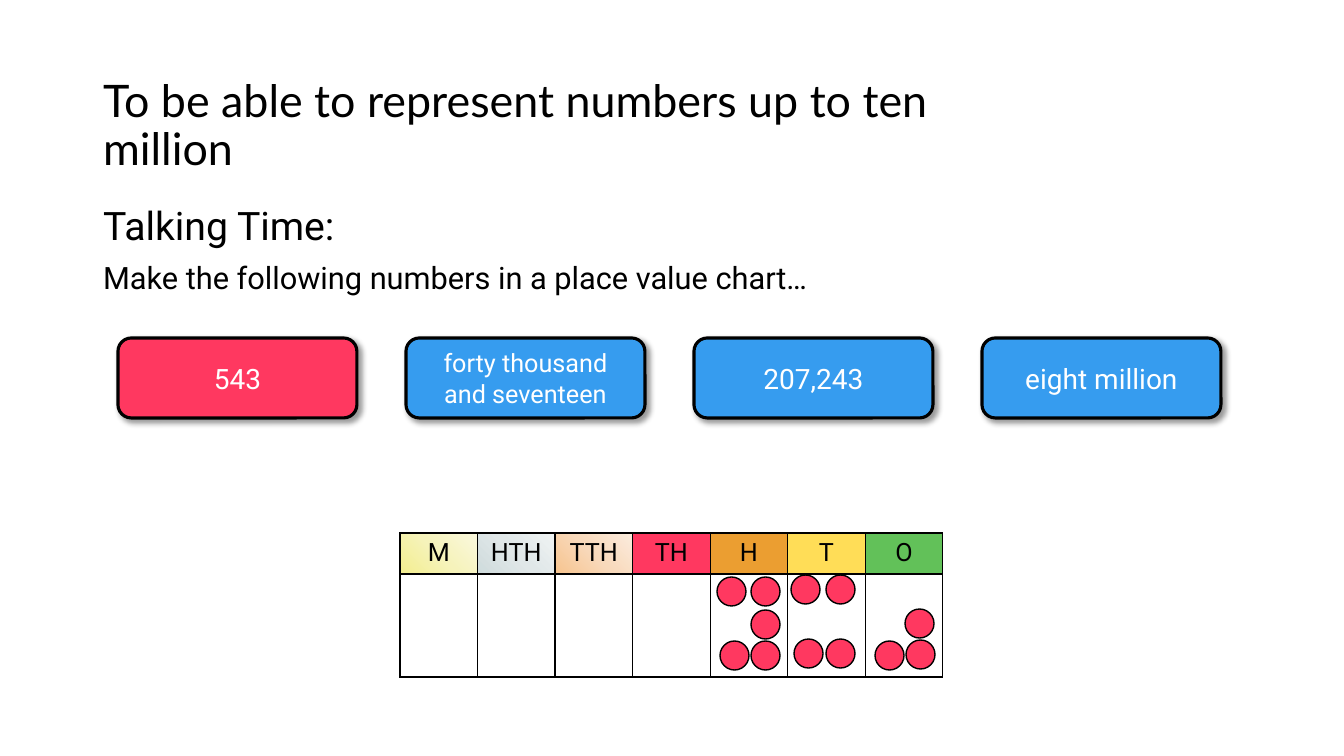
from lxml import etree
from pptx import Presentation
from pptx import util as u
from pptx.dml.color import RGBColor
from pptx.enum import shapes, text
from pptx.oxml import ns, parse_xml

SCALE = 914400 / 100.8
HUES = {
    "black": "000000", "white": "FFFFFF", "red": "FF3860", "blue": "369CEF",
    "orange": "EB9E31", "yellow": "FFDD57", "green": "62C159",
}
FADES = {
    "lemon": ("F3EE8E", "F6F3BB", "FAF8DE"),
    "mist": ("CFDBDC", "E0E7E8", "EFF3F3"),
    "peach": ("F7C48E", "F8D9BB", "FBECDE"),
}
CARDS = [
    ("543", "red", 20),
    ("forty thousand and seventeen", "blue", 18),
    ("207,243", "blue", 20),
    ("eight million", "blue", 20),
]
HEADS = [
    ("M", "lemon"), ("HTH", "mist"), ("TTH", "peach"), ("TH", "red"),
    ("H", "orange"), ("T", "yellow"), ("O", "green"),
]
COUNTERS = {
    "hundreds": [(717, 577), (751, 577), (751, 610), (720, 641), (751, 641)],
    "tens": [(791, 575), (826, 575), (794, 639), (826, 639)],
    "ones": [(905, 609), (875, 641), (906, 640)],
}


def px(n):
    return u.Emu(round(n * SCALE))


def rgb(name):
    return RGBColor.from_string(HUES[name])


def node(root, tag, **attrs):
    item = etree.SubElement(root, ns.qn("a:" + tag))
    for key, value in attrs.items():
        item.set(key, str(value))
    return item


def write(frame, words, size=18, face="Roboto", hue="black", align="CENTER",
          space=None, gap=0, plain=False, more=False):
    para = frame.add_paragraph() if more else frame.paragraphs[0]
    para.text = words
    para.alignment = getattr(text.PP_ALIGN, align)
    if space:
        para.line_spacing = space
    para.space_before = u.Pt(gap)
    if plain:
        props = para._p.get_or_add_pPr()
        props.set("marL", "0")
        props.set("indent", "0")
        node(props, "buNone")
    font = para.runs[0].font
    font.size = u.Pt(size)
    font.name = face
    font.color.rgb = rgb(hue)


class Deck:
    def __init__(self, wide, high):
        self.show = Presentation()
        self.show.slide_width, self.show.slide_height = px(wide), px(high)
        self.slide = self.show.slides.add_slide(self.show.slide_layouts[1])

    def holder(self, index, box, anchor):
        item = self.slide.placeholders[index]
        item.left, item.top, item.width, item.height = map(px, box)
        frame = item.text_frame
        frame.auto_size = text.MSO_AUTO_SIZE.NONE
        frame.vertical_anchor = anchor
        frame.word_wrap = True
        return frame

    def title(self, words, box):
        frame = self.holder(0, box, text.MSO_ANCHOR.MIDDLE)
        write(frame, words, size=32, face="Lato", align="LEFT", space=0.9)

    def body(self, lines, box):
        frame = self.holder(1, box, text.MSO_ANCHOR.TOP)
        for i, (words, size) in enumerate(lines):
            write(frame, words, size=size, align="LEFT", space=0.9,
                  gap=10 if i else 0, plain=True, more=i > 0)

    def shape(self, kind, box, hue, line):
        item = self.slide.shapes.add_shape(kind, *map(px, box))
        item.shadow.inherit = False
        item.fill.solid()
        item.fill.fore_color.rgb = rgb(hue)
        item.line.color.rgb = rgb("black")
        item.line.width = u.Pt(line)
        return item

    def card(self, words, box, hue, size):
        item = self.shape(shapes.MSO_SHAPE.ROUNDED_RECTANGLE, box, hue, 2.25)
        cast = node(item._element.spPr.find(ns.qn("a:effectLst")), "outerShdw",
                    blurRad=u.Pt(4), dist=u.Pt(3), dir=45 * 60000,
                    algn="tl", rotWithShape=0)
        node(node(cast, "srgbClr", val=HUES["black"]), "alpha", val=40000)
        item.text_frame.word_wrap = True
        item.text_frame.vertical_anchor = text.MSO_ANCHOR.MIDDLE
        write(item.text_frame, words, size=size, hue="white")

    def dot(self, left, top):
        self.shape(shapes.MSO_SHAPE.OVAL, (left, top, 29, 29), "red", 1)

    def paint(self, cell, hue):
        props = cell._tc.get_or_add_tcPr()
        for side in ("lnL", "lnR", "lnT", "lnB"):
            edge = node(props, side, w=u.Pt(1))
            node(node(edge, "solidFill"), "srgbClr", val=HUES["black"])
        if hue in HUES:
            cell.fill.solid()
            cell.fill.fore_color.rgb = rgb(hue)
            return
        fade = node(props, "gradFill", rotWithShape=1)
        stops = node(fade, "gsLst")
        for i, tone in enumerate(FADES[hue]):
            node(node(stops, "gs", pos=i * 50000), "srgbClr", val=tone)
        node(node(fade, "path", path="circle"), "fillToRect",
             t=100000, r=100000)

    def chart(self, heads, box, rows):
        frame = self.slide.shapes.add_table(len(rows), len(heads), *map(px, box))
        table = frame.table
        table.first_row = table.horz_banding = False
        for row, high in zip(table.rows, rows):
            row.height = px(high)
        for i, (words, hue) in enumerate(heads):
            table.columns[i].width = px(box[2] / len(heads))
            write(table.cell(0, i).text_frame, words)
            self.paint(table.cell(0, i), hue)
            self.paint(table.cell(1, i), "white")


def main():
    deck = Deck(1344, 756)
    deck.title("To be able to represent numbers up to ten million",
               (93, 54, 968, 146))
    deck.body([("Talking Time:", 28),
               ("Make the following numbers in a place value chart…", 22)],
              (93, 202, 1159, 480))
    deck.chart(HEADS, (400, 533, 543, 144), (41, 103))
    for i, (words, hue, size) in enumerate(CARDS):
        deck.card(words, (118 + 288 * i, 338, 239, 80), hue, size)
    for spots in COUNTERS.values():
        for left, top in spots:
            deck.dot(left, top)
    deck.show.save("out.pptx")


if __name__ == "__main__":
    main()
